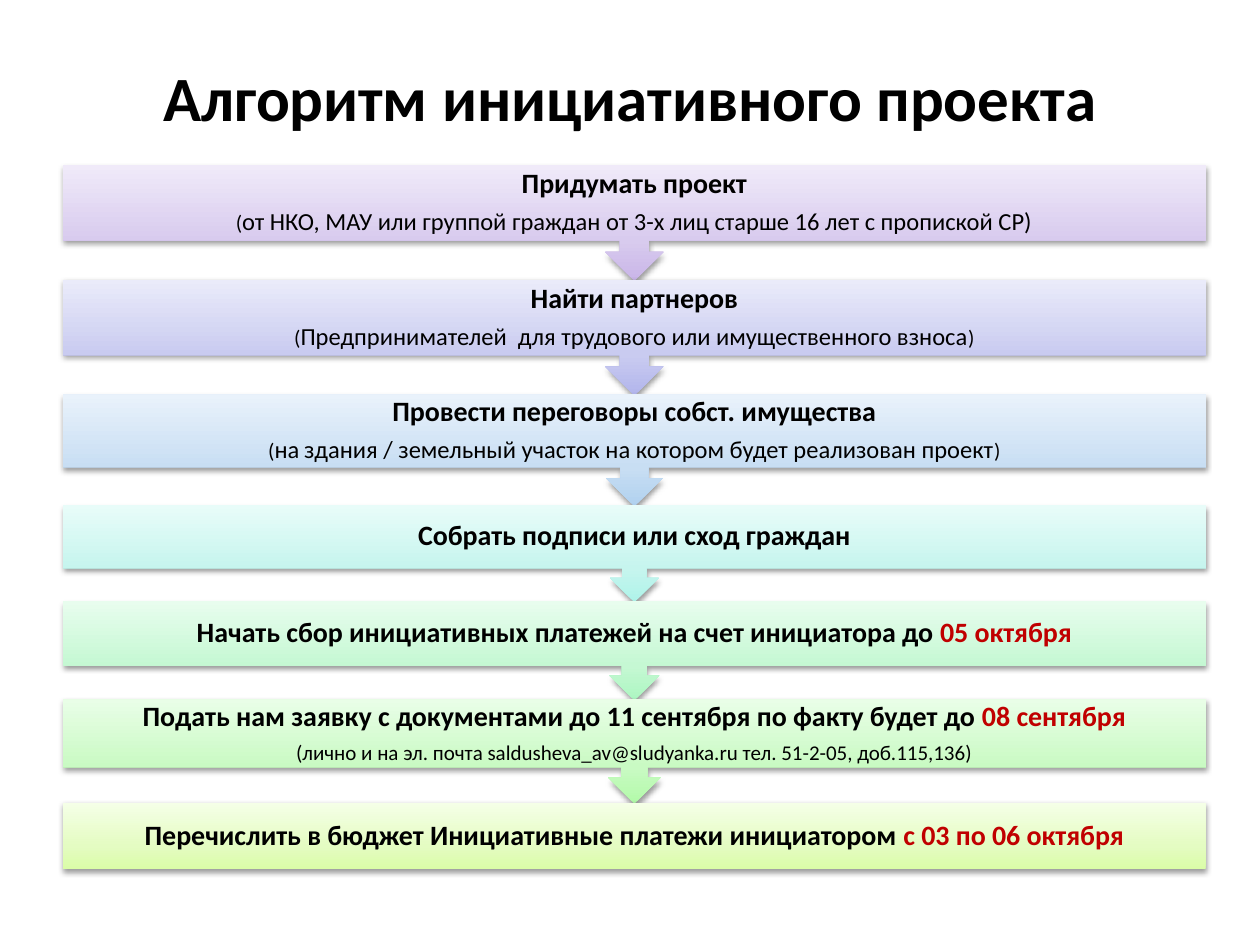
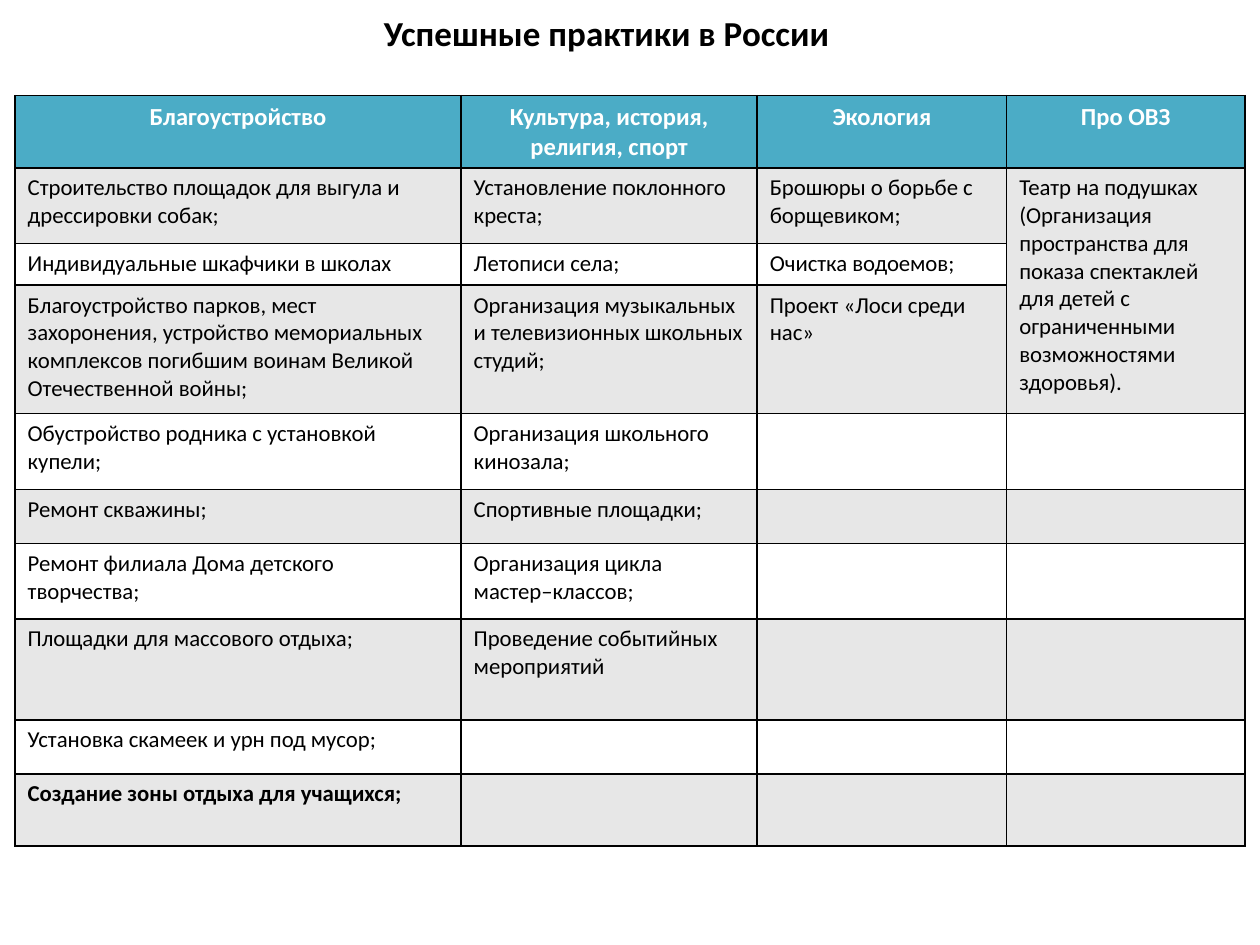
from collections import namedtuple
from copy import deepcopy

from lxml.etree import SubElement
from pptx import Presentation
from pptx.dml.color import RGBColor
from pptx.enum.shapes import MSO_SHAPE
from pptx.enum.text import MSO_ANCHOR, PP_ALIGN
from pptx.oxml.ns import qn
from pptx.util import Inches, Pt

BLACK = RGBColor(0x00, 0x00, 0x00)
WHITE = RGBColor(0xFF, 0xFF, 0xFF)
DATE_RED = RGBColor(0xC0, 0x00, 0x00)
HEADER_TEAL = RGBColor(0x4B, 0xAC, 0xC6)
BAND_GREY = RGBColor(0xE7, 0xE7, 0xE7)

FONT = "Calibri"
COLUMNS, ROWS = 100, 75
GRADIENT_POSITIONS = (0, 0.35, 1)

TextStyle = namedtuple("TextStyle", "size bold color")
STEP = TextStyle(16, True, BLACK)
DATE = TextStyle(16, True, DATE_RED)
NOTE = TextStyle(14, False, BLACK)
SMALL = TextStyle(12, False, BLACK)
TABLE_HEADER = TextStyle(14, True, WHITE)
TABLE_BODY = TextStyle(13, False, BLACK)
TABLE_LAST = TextStyle(13, True, BLACK)

# Each step: gradient from bottom to top, rows to the next step, lines of (text, style)
STEPS = [
    ("C9B5E8 D8CBEE F0EAF9", 9.1, [
        [("Придумать проект", STEP)],
        [("(", SMALL),
         ("от НКО, МАУ или группой граждан от 3-х лиц старше 16 лет с пропиской СР)", NOTE)]]),
    ("B2B5EC C9CBF0 EAEBFA", 9.1, [
        [("Найти партнеров", STEP)],
        [("(", SMALL),
         ("Предпринимателей  для трудового или имущественного взноса", NOTE),
         (")", SMALL)]]),
    ("B0D1EF C8DEF3 E9F2FB", 8.8, [
        [("Провести переговоры собст. имущества", STEP)],
        [("(", SMALL), ("на", NOTE), (" ", SMALL),
         ("здания / земельный участок на котором будет реализован проект", NOTE),
         (")", SMALL)]]),
    ("AEF3E9 C6F5EE E8FCF9", 7.6, [
        [("Собрать подписи или сход граждан", STEP)]]),
    ("ACF6C1 C5F8D3 E8FDEE", 7.8, [
        [("Начать сбор инициативных платежей на счет инициатора до ", STEP),
         ("05 октября", DATE)]]),
    ("B2FAA9 C9FAC3 E9FEE7", 8.2, [
        [("Подать нам заявку с документами до 11 сентября по факту будет до ", STEP),
         ("08 сентября", DATE)],
        [("(лично и на эл. почта saldusheva_av@sludyanka.ru тел. 51-2-05, доб.115,136)", SMALL)]]),
    ("DAFDA7 E4FCC2 F5FFE7", 5.2, [
        [("Перечислить в бюджет Инициативные платежи инициатором ", STEP),
         ("с 03 по 06 октября", DATE)]]),
]

PRACTICE_COLUMNS = [35.4, 23.5, 19.8, 18.9]
PRACTICE_ROWS = [5.7, 6, 3.3, 10.2, 6, 4.3, 6, 8, 4.3, 5.7]
PRACTICES = [
    ["Благоустройство", "Культура, история, религия, спорт", "Экология", "Про ОВЗ"],
    ["Строительство площадок для выгула и дрессировки собак;",
     "Установление поклонного креста;",
     "Брошюры о борьбе с борщевиком;",
     "Театр на подушках\n(Организация пространства для показа спектаклей для детей "
     "с ограниченными возможностями здоровья)."],
    ["Индивидуальные шкафчики в школах", "Летописи села;", "Очистка водоемов;"],
    ["Благоустройство парков, мест захоронения, устройство мемориальных комплексов "
     "погибшим воинам Великой Отечественной войны;",
     "Организация музыкальных и телевизионных школьных студий;",
     "Проект «Лоси среди нас»"],
    ["Обустройство родника с установкой купели;", "Организация школьного кинозала;"],
    ["Ремонт скважины;", "Спортивные площадки;"],
    ["Ремонт филиала Дома детского творчества;", "Организация цикла мастер–классов;"],
    ["Площадки для массового отдыха;", "Проведение событийных мероприятий"],
    ["Установка скамеек и урн под мусор;"],
    ["Создание зоны отдыха для учащихся;"],
]


class Deck:
    """Holds the shared style and the slide being built; lengths are grid columns and rows."""

    def __init__(self):
        self.presentation = Presentation()
        self.presentation.slide_width = Inches(10)
        self.presentation.slide_height = Inches(7.5)
        self.slide = None

    def x(self, columns):
        return round(self.presentation.slide_width * columns / COLUMNS)

    def y(self, rows):
        return round(self.presentation.slide_height * rows / ROWS)

    def box(self, left, top, width, height):
        return self.x(left), self.y(top), self.x(width), self.y(height)

    def style_run(self, run, style):
        font = run.font
        font.name = FONT
        font.size = Pt(style.size)
        font.bold = style.bold
        font.color.rgb = style.color

    def style_text(self, text_frame, style, alignment):
        for paragraph in text_frame.paragraphs:
            paragraph.alignment = alignment
            for run in paragraph.runs:
                self.style_run(run, style)

    def add_slide(self, title, size, box):
        self.slide = self.presentation.slides.add_slide(self.presentation.slide_layouts[5])
        shape = self.slide.shapes.title
        shape.left, shape.top, shape.width, shape.height = self.box(*box)
        shape.text_frame.text = title
        shape.text_frame.vertical_anchor = MSO_ANCHOR.MIDDLE
        self.style_text(shape.text_frame, TextStyle(size, True, BLACK), PP_ALIGN.CENTER)

    def add_step(self, kind, box, colors, lines):
        shape = self.slide.shapes.add_shape(kind, *self.box(*box))
        shape.line.fill.background()
        self.fill_gradient(shape, colors)
        self.add_shadow(shape)

        text_frame = shape.text_frame
        text_frame.word_wrap = True
        text_frame.vertical_anchor = MSO_ANCHOR.MIDDLE
        text_frame.margin_left = text_frame.margin_right = Inches(0.12)
        text_frame.margin_top = text_frame.margin_bottom = Inches(0.12)
        for index, line in enumerate(lines):
            paragraph = text_frame.add_paragraph() if index else text_frame.paragraphs[0]
            paragraph.alignment = PP_ALIGN.CENTER
            paragraph.line_spacing = 0.9
            self.space_after(paragraph, 35)
            for text, style in line:
                run = paragraph.add_run()
                run.text = text
                self.style_run(run, style)

    def fill_gradient(self, shape, colors):
        shape.fill.gradient()
        shape.fill.gradient_angle = 90
        stop_list = shape._element.spPr.find(".//" + qn("a:gsLst"))
        stop_list.append(deepcopy(stop_list[0]))
        for stop, position, color in zip(shape.fill.gradient_stops, GRADIENT_POSITIONS, colors):
            stop.position = position
            stop.color.rgb = color

    def add_shadow(self, shape):
        shape.shadow.inherit = False
        effects = shape._element.spPr.find(qn("a:effectLst"))
        shadow = SubElement(effects, qn("a:outerShdw"), blurRad="40000", dist="20000",
                            dir="5400000", rotWithShape="0")
        color = SubElement(shadow, qn("a:srgbClr"), val=str(BLACK))
        SubElement(color, qn("a:alpha"), val="38000")

    def space_after(self, paragraph, percent):
        paragraph.space_after = Pt(0)
        spacing = paragraph._p.pPr.find(qn("a:spcAft"))
        spacing.remove(spacing[0])
        SubElement(spacing, qn("a:spcPct"), val=str(percent * 1000))

    def add_table(self, left, top, widths, heights, rows):
        """Draws a header row, then alternating bands; short rows leave empty cells."""
        frame = self.slide.shapes.add_table(
            len(heights), len(widths), *self.box(left, top, sum(widths), sum(heights)))
        table = frame.table
        table.horz_banding = False
        for column, width in zip(table.columns, widths):
            column.width = self.x(width)
        for row, height in zip(table.rows, heights):
            row.height = self.y(height)

        for row_index, texts in enumerate(rows):
            style, fill, alignment = TABLE_BODY, WHITE, PP_ALIGN.LEFT
            if row_index == 0:
                style, fill, alignment = TABLE_HEADER, HEADER_TEAL, PP_ALIGN.CENTER
            elif row_index % 2:
                fill = BAND_GREY
            if row_index == len(rows) - 1:
                style = TABLE_LAST
            for column_index in range(len(widths)):
                cell = table.cell(row_index, column_index)
                self.add_borders(cell)
                cell.fill.solid()
                cell.fill.fore_color.rgb = fill
                if column_index < len(texts):
                    cell.text_frame.text = texts[column_index]
                    self.style_text(cell.text_frame, style, alignment)
        return table

    def add_borders(self, cell):
        properties = cell._tc.get_or_add_tcPr()
        for side in ("lnL", "lnR", "lnT", "lnB"):
            line = SubElement(properties, qn("a:" + side), w=str(Pt(1)))
            SubElement(SubElement(line, qn("a:solidFill")), qn("a:srgbClr"), val=str(BLACK))


def build_algorithm_slide(deck):
    deck.add_slide("Алгоритм инициативного проекта", 36, (5, 3, 90, 9.3))
    top = 13.1
    for index, (colors, pitch, lines) in enumerate(STEPS):
        is_last = index == len(STEPS) - 1
        kind = MSO_SHAPE.RECTANGLE if is_last else MSO_SHAPE.DOWN_ARROW_CALLOUT
        gradient = [RGBColor.from_string(color) for color in colors.split()]
        deck.add_step(kind, (5, top, 90.7, pitch + 0.1), gradient, lines)
        top += pitch


def build_practices_slide(deck):
    deck.add_slide("Успешные практики в России", 20, (1.2, 0, 93.9, 5.2))
    table = deck.add_table(1.2, 7.6, PRACTICE_COLUMNS, PRACTICE_ROWS, PRACTICES)
    table.cell(1, 3).merge(table.cell(3, 3))


def main():
    deck = Deck()
    build_algorithm_slide(deck)
    build_practices_slide(deck)
    deck.presentation.save("out.pptx")


if __name__ == "__main__":
    main()
